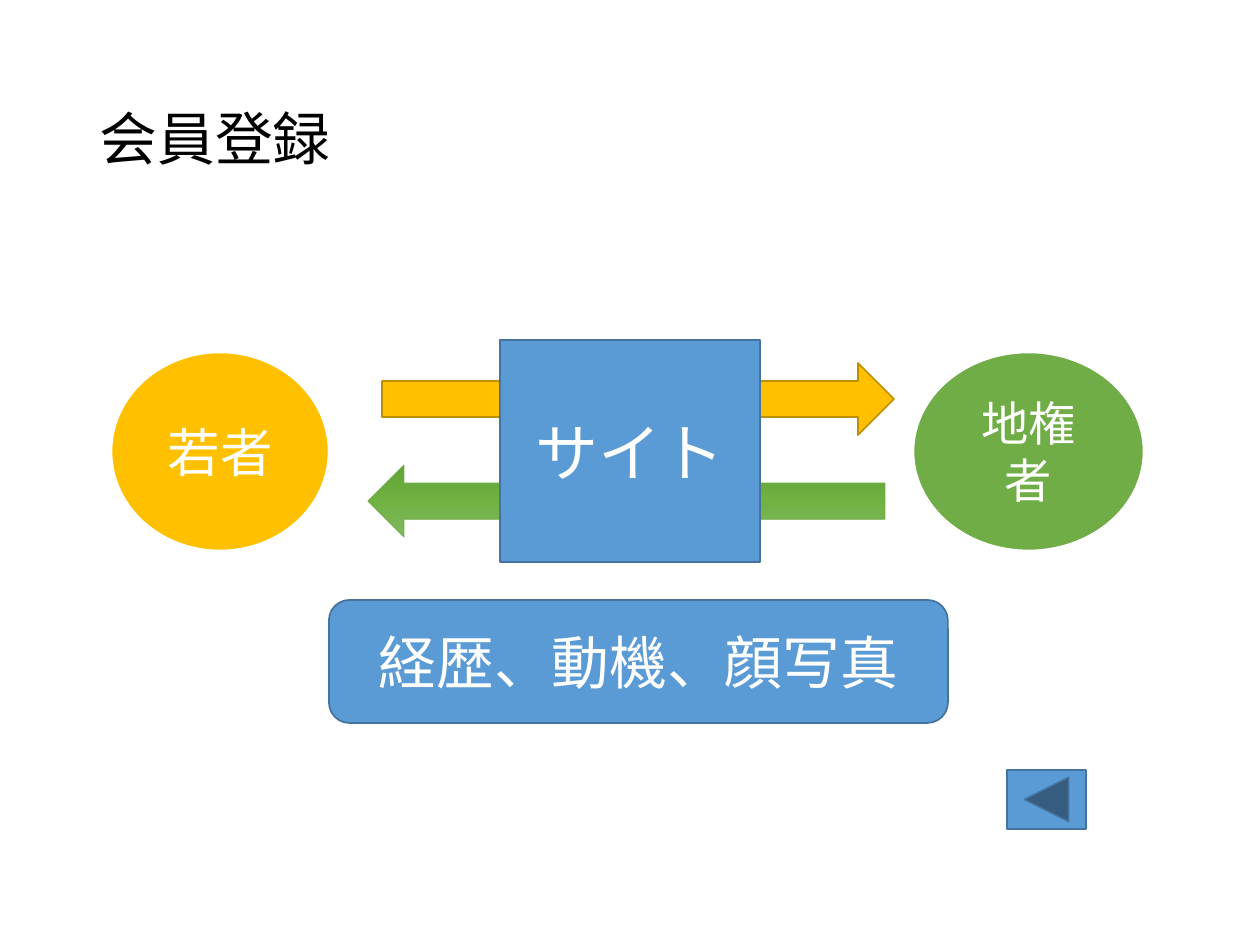
from copy import deepcopy

from pptx import Presentation
from pptx.dml.color import RGBColor
from pptx.enum.shapes import MSO_SHAPE
from pptx.enum.text import MSO_ANCHOR, PP_ALIGN
from pptx.oxml.ns import qn
from pptx.util import Pt

SCALE = 914400 / 126
BLACK = RGBColor(0x00, 0x00, 0x00)
WHITE = RGBColor(0xFF, 0xFF, 0xFF)
GOLD = RGBColor(0xFF, 0xC0, 0x00)
BROWN = RGBColor(0xBD, 0x8E, 0x00)
GREEN = RGBColor(0x70, 0xAD, 0x47)
BLUE = RGBColor(0x5B, 0x9B, 0xD5)
NAVY = RGBColor(0x43, 0x73, 0x9E)
FADE = (
    RGBColor(0x81, 0xB8, 0x61),
    RGBColor(0x6F, 0xB2, 0x42),
    RGBColor(0x62, 0xA3, 0x36),
)


def px(n):
    return round(n * SCALE)


def write(shape, text, size, color=WHITE, align=PP_ALIGN.CENTER, space=None):
    frame = shape.text_frame
    frame.word_wrap = True
    frame.vertical_anchor = MSO_ANCHOR.MIDDLE
    para = frame.paragraphs[0]
    para.alignment = align
    para.line_spacing = space
    run = para.add_run()
    run.text = text
    run.font.name = "Calibri"
    run.font.size = Pt(size)
    run.font.color.rgb = color


def draw(slide, kind, box, fill, line, width=1):
    shape = slide.shapes.add_shape(kind, *map(px, box))
    shape.shadow.inherit = False
    shape.fill.solid()
    shape.fill.fore_color.rgb = fill
    shape.line.color.rgb = line
    shape.line.width = Pt(width)
    return shape


def blend(shape, colors):
    fill = shape.fill
    fill.gradient()
    fill.gradient_angle = 270
    stops = shape._element.spPr.find(qn("a:gradFill")).find(qn("a:gsLst"))
    stops.insert(1, deepcopy(stops[0]))
    for i, (stop, color) in enumerate(zip(fill.gradient_stops, colors)):
        stop.position = i / (len(colors) - 1)
        stop.color.rgb = color


def add_title(slide, box):
    title = slide.shapes.title
    title.left, title.top, title.width, title.height = map(px, box)
    write(title, "会員登録", 33, color=BLACK, align=PP_ALIGN.LEFT, space=0.9)


def add_people(slide, box):
    x, y, w, h = box
    people = (
        ("若者", 30, 0, 218, GOLD),
        ("地権者", 27, w - 231, 231, GREEN),
    )
    for text, size, left, wide, color in people:
        oval = draw(slide, MSO_SHAPE.OVAL, (x + left, y, wide, h), color, WHITE, 1.5)
        write(oval, text, size)


def add_flow(slide, box):
    x, y, w, h = box
    arrow = MSO_SHAPE.RIGHT_ARROW
    draw(slide, arrow, (x + 14, y + 23, w - 14, 72), GOLD, BROWN)
    back = draw(slide, arrow, (x, y + 125, w - 9, 72), GREEN, GREEN, 0.5)
    back.rotation = 180
    blend(back, FADE)
    site = draw(slide, MSO_SHAPE.RECTANGLE, (x + 132, y, 260, h), BLUE, NAVY)
    write(site, "サイト", 36)


def add_data(slide, box):
    card = draw(slide, MSO_SHAPE.ROUNDED_RECTANGLE, box, BLUE, NAVY)
    write(card, "経歴、動機、顔写真", 33)


def add_button(slide, box):
    draw(slide, MSO_SHAPE.ACTION_BUTTON_BACK_OR_PREVIOUS, box, BLUE, NAVY)


def main():
    deck = Presentation()
    deck.slide_width, deck.slide_height = px(1260), px(945)
    slide = deck.slides.add_slide(deck.slide_layouts[5])
    add_title(slide, (87, 50, 1086, 183))
    add_people(slide, (111, 352, 1033, 199))
    add_data(slide, (329, 600, 619, 123))
    add_flow(slide, (368, 340, 526, 222))
    add_button(slide, (1007, 770, 79, 59))
    deck.save("out.pptx")


if __name__ == "__main__":
    main()
